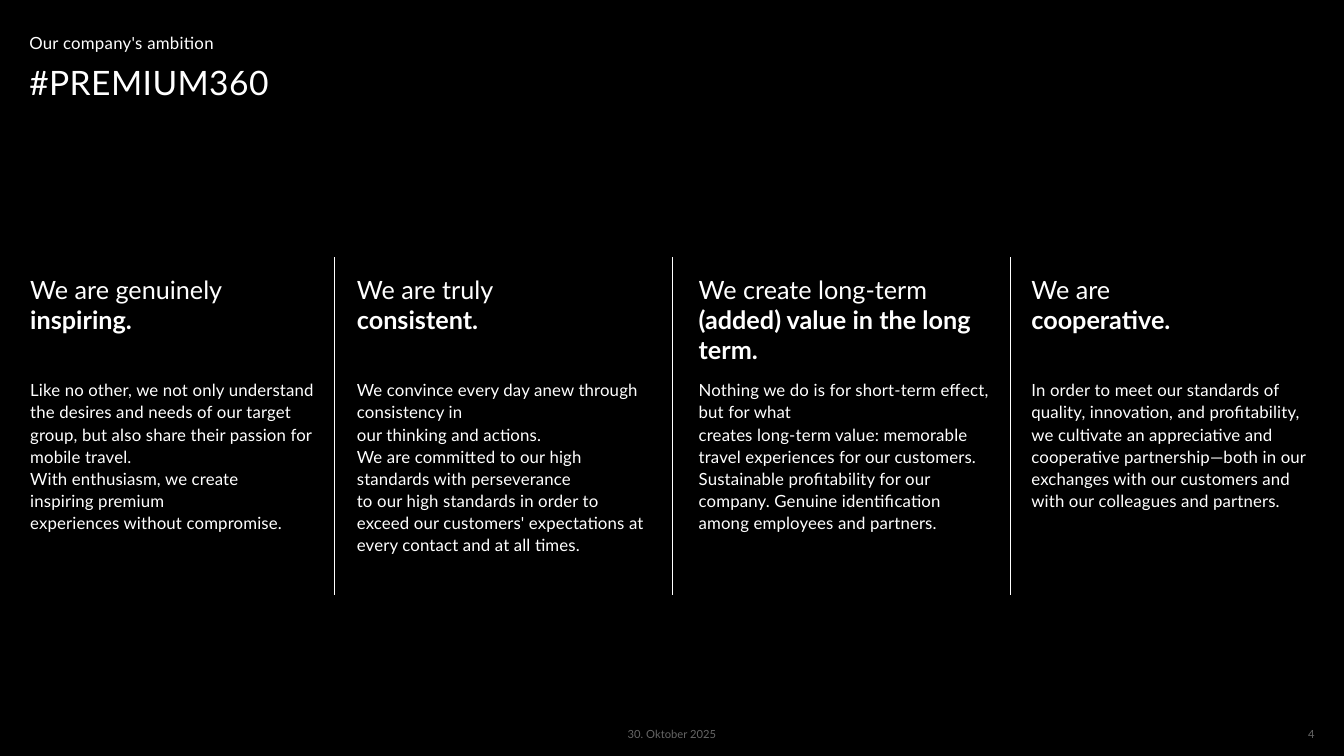
import pptx
import pptx.util
import pptx.dml.color
import pptx.enum.shapes
import pptx.enum.text
import pptx.oxml.ns
from lxml import etree

Inches, Pt = pptx.util.Inches, pptx.util.Pt
qn = pptx.oxml.ns.qn
Align = pptx.enum.text.PP_ALIGN
WHITE, GREY, BLACK = "FFFFFF", "666666", "000000"


def color(code):
    return pptx.dml.color.RGBColor.from_string(code)


class Page:
    font = "Lato"

    def __init__(self, deck):
        self.slide = deck.slides.add_slide(deck.slide_layouts[1])
        fill = self.slide.background.fill
        fill.solid()
        fill.fore_color.rgb = color(BLACK)

    def frame(self, shape, box, pad=(0, 0, 0, 0)):
        """Place a text shape and return its first paragraph."""
        shape.left, shape.top, shape.width, shape.height = map(Inches, box)
        text = shape.text_frame
        text.word_wrap = True
        text.auto_size = pptx.enum.text.MSO_AUTO_SIZE.NONE
        text.vertical_anchor = pptx.enum.text.MSO_ANCHOR.TOP
        (text.margin_left, text.margin_top,
         text.margin_right, text.margin_bottom) = map(Inches, pad)
        return text.paragraphs[0]

    def style(self, para, size, tone=WHITE, align=Align.LEFT, lead=1.0, track=0):
        para.alignment = align
        para.line_spacing = lead
        para.space_before = Pt(0)
        para.font.name = self.font
        para.font.size = Pt(size)
        para.font.color.rgb = color(tone)
        if track:
            props = para._p.get_or_add_pPr().find(qn("a:defRPr"))
            props.set("spc", str(round(track * 100)))

    def holder(self, index, words, box, size, lead, track):
        """Fill a template placeholder with one plain line."""
        para = self.frame(self.slide.placeholders[index], box)
        para.text = words
        props = para._p.get_or_add_pPr()
        props.set("marL", "0")
        props.set("indent", "0")
        etree.SubElement(props, qn("a:buNone"))
        self.style(para, size, lead=lead, track=track)

    def label(self, words, box, size, pad=(0, 0, 0, 0), **look):
        shape = self.slide.shapes.add_textbox(0, 0, 0, 0)
        para = self.frame(shape, box, pad)
        para.text = words
        self.style(para, size, **look)

    def heading(self, lead, strong, box):
        shape = self.slide.shapes.add_textbox(0, 0, 0, 0)
        para = self.frame(shape, box, (0, 0.05, 0, 0.05))
        para.add_run().text = lead
        para.add_line_break()
        run = para.add_run()
        run.text = strong
        run.font.bold = True
        self.style(para, 18)

    def rule(self, x, top, base):
        line = self.slide.shapes.add_connector(
            pptx.enum.shapes.MSO_CONNECTOR.STRAIGHT,
            Inches(x), Inches(top), Inches(x), Inches(base))
        line.line.color.rgb = color(WHITE)
        line.line.width = Pt(1)
        etree.SubElement(line._element.spPr, qn("a:effectLst"))


# Left edge, light heading, bold heading, body
COLUMNS = [
    (0.3, "We are genuinely", "inspiring.",
     "Like no other, we not only understand the desires and needs of our "
     "target group, but also share their passion for mobile travel.\n"
     "With enthusiasm, we create\ninspiring premium\n"
     "experiences without compromise."),
    (3.54, "We are truly", "consistent.",
     "We convince every day anew through consistency in\n"
     "our thinking and actions.\n"
     "We are committed to our high standards with perseverance\n"
     "to our high standards in order to exceed our customers' expectations "
     "at every contact and at all times."),
    (6.93, "We create long-term", "(added) value in the long term.",
     "Nothing we do is for short-term effect, but for what\n"
     "creates long-term value: memorable travel experiences for our "
     "customers. Sustainable profitability for our company. Genuine "
     "identification among employees and partners."),
    (10.23, "We are", "cooperative.",
     "In order to meet our standards of quality, innovation, and "
     "profitability, we cultivate an appreciative and cooperative "
     "partnership—both in our exchanges with our customers and with our "
     "colleagues and partners."),
]


def main():
    deck = pptx.Presentation()
    deck.slide_width, deck.slide_height = Inches(13.33), Inches(7.5)
    page = Page(deck)

    # Title and line above it
    page.holder(0, "#PREMIUM360", (0.29, 0.66, 9.87, 0.63), 24, 0.9, 0.3)
    page.holder(1, "Our company's ambition", (0.29, 0.3, 6.26, 0.19), 12, 1.1, 0.2)

    # Four columns
    for left, lead, strong, body in COLUMNS:
        page.heading(lead, strong, (left, 2.67, 3.1, 0.71))
        page.label(body, (left, 3.75, 2.97, 0.51), 12,
                   pad=(0, 0, 0.08, 0), lead=1.1, track=0.1)

    # Rules between the columns
    for step in range(3):
        page.rule(3.32 + 3.35 * step, 2.55, 5.9)

    # Footer
    page.label("30. Oktober 2025", (5.88, 7.22, 1.57, 0.21), 8,
               tone=GREY, align=Align.CENTER)
    page.label("4", (11.47, 7.22, 1.57, 0.21), 8, tone=GREY, align=Align.RIGHT)

    deck.save("out.pptx")


if __name__ == "__main__":
    main()
